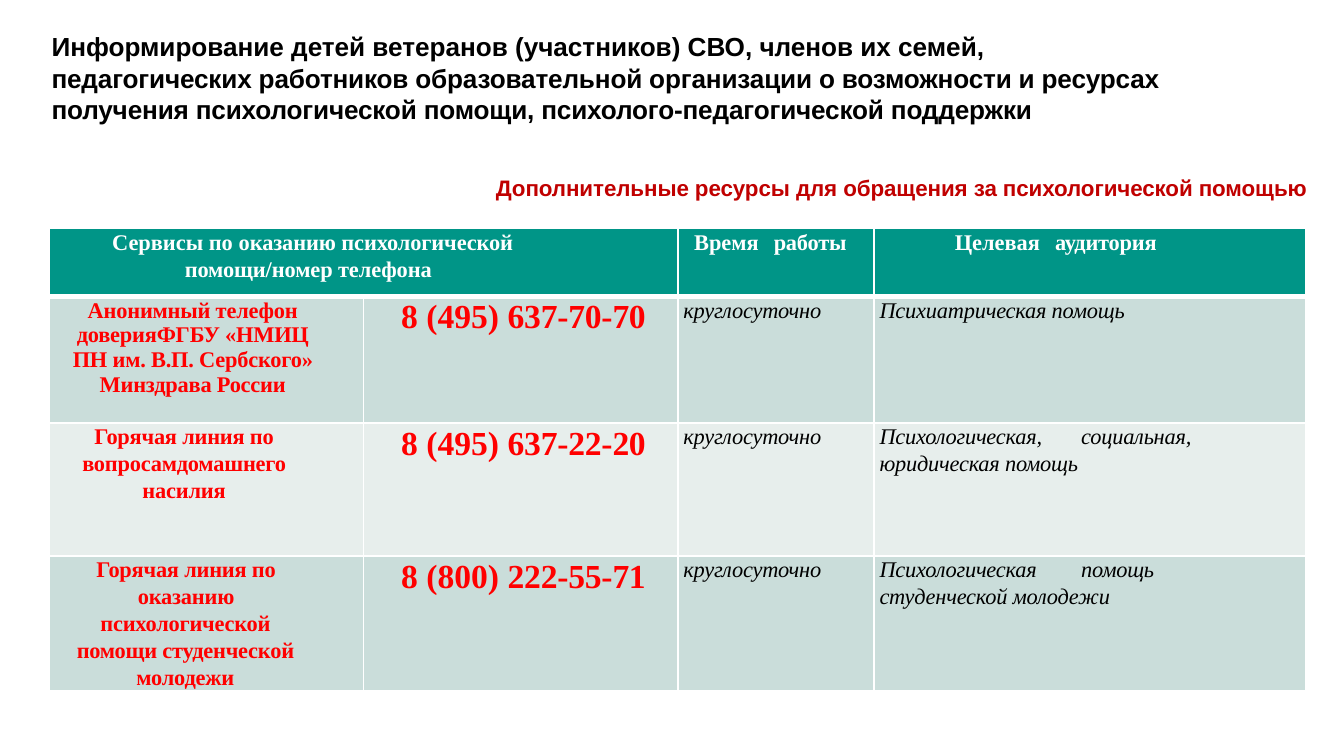
from pptx import Presentation
from pptx.dml.color import RGBColor
from pptx.enum.text import PP_ALIGN as Align, MSO_ANCHOR as Anchor
from pptx.oxml.xmlchemy import OxmlElement as Element
from pptx.util import Inches, Pt

WIDTH = Inches(10)
HEIGHT = WIDTH * 9 // 16
COL, ROW = WIDTH / 100, HEIGHT / 100  # grid of 100 columns by 100 rows
SANS, SERIF = "Arial", "Times New Roman"
BLACK, WHITE, RED, DARK_RED = "000000", "FFFFFF", "FF0000", "C00000"
TEAL, MIST, PALE = "009587", "CADDDA", "E7EEEC"


def color(value):
    return RGBColor.from_string(value)


def grid(left, top, width, height):
    return [round(n) for n in (left * COL, top * ROW, width * COL, height * ROW)]


def add_span(para, text, font, size, ink, bold=True, italic=False, spacing=-0.1):
    span = para.add_run()
    span.text = text
    style = span.font
    style.name, style.size, style.bold, style.italic = font, Pt(size), bold, italic
    style.color.rgb = color(ink)
    span._r.get_or_add_rPr().set("spc", str(round(spacing * 100)))


def set_para(para, left=0, right=0, first=0, lines=None, before=0, align=Align.LEFT,
             tab=None):
    """Indents and the tab stop are in grid columns, lines and before in points."""
    para.alignment = align
    para.space_before = Pt(before)
    if lines:
        para.line_spacing = Pt(lines)
    props = para._p.get_or_add_pPr()
    for name, value in (("marL", left), ("marR", right), ("indent", first)):
        props.set(name, str(round(value * COL)))
    if tab:
        stops, stop = Element("a:tabLst"), Element("a:tab")
        stop.set("pos", str(round(tab * COL)))
        stop.set("algn", "l")
        stops.append(stop)
        props.append(stops)


def new_para(frame, index):
    return frame.add_paragraph() if index else frame.paragraphs[0]


def add_frame(page, box):
    frame = page.shapes.add_textbox(*box).text_frame
    frame.word_wrap = True
    frame.margin_left = frame.margin_right = frame.margin_bottom = 0
    frame.margin_top = Inches(0.01)
    return frame


def add_title(page, box, paragraphs):
    frame = add_frame(page, box)
    for index, (text, spacing) in enumerate(paragraphs):
        para = new_para(frame, index)
        set_para(para, left=0.1, before=0 if index else 1.1)
        add_span(para, text, SANS, 14, BLACK, spacing=spacing)


def add_subtitle(page, box, text):
    frame = add_frame(page, box)
    frame.vertical_anchor = Anchor.BOTTOM
    para = frame.paragraphs[0]
    set_para(para, left=33.4)
    add_span(para, text, SANS, 12, DARK_RED, spacing=-0.05)


def style_cell(cell, fill, top=1, bottom=1):
    cell.margin_left = cell.margin_right = cell.margin_top = cell.margin_bottom = 0
    props = cell._tc.get_or_add_tcPr()
    for side, width in (("L", 1), ("R", 1), ("T", top), ("B", bottom)):
        line = Element(f"a:ln{side}")
        line.set("w", str(Pt(width)))
        solid, ink = Element("a:solidFill"), Element("a:srgbClr")
        ink.set("val", WHITE)
        solid.append(ink)
        line.append(solid)
        props.append(line)
    cell.fill.solid()
    cell.fill.fore_color.rgb = color(fill)


def fill_header(cells):
    service, _, hours, audience = cells
    service.merge(cells[1])
    para = service.text_frame.paragraphs[0]
    set_para(para, left=10.1, right=8, first=-5.4, lines=14.4, before=0.1)
    add_span(para, "Сервисы по ", SERIF, 12, WHITE, spacing=0)
    add_span(para, "оказанию психологической помощи/номер телефона",
             SERIF, 12, WHITE, spacing=-0.05)
    for cell, left, words in ((hours, 1.2, ("Время", "работы")),
                              (audience, 6, ("Целевая", "аудитория"))):
        para = cell.text_frame.paragraphs[0]
        set_para(para, left=left, lines=14.1)
        add_span(para, words[0], SERIF, 12, WHITE, spacing=0)
        add_span(para, " ", SERIF, 12, WHITE, spacing=5)  # wide word gap
        add_span(para, words[1], SERIF, 12, WHITE)


def fill_service(cells, names, phone, audience):
    name_cell, phone_cell, hours_cell, audience_cell = cells
    for index, (text, layout) in enumerate(names):
        para = new_para(name_cell.text_frame, index)
        set_para(para, align=Align.CENTER, **layout)
        add_span(para, text, SERIF, 12, RED)

    para = phone_cell.text_frame.paragraphs[0]
    set_para(para, left=0.4, lines=21.1, align=Align.CENTER)
    for text, spacing in zip(phone, (0, -0.1, -0.3)):
        add_span(para, text, SERIF, 18, RED, spacing=spacing)

    plain = dict(lines=14.1)
    for cell, (text, layout) in ((hours_cell, ("круглосуточно", plain)),
                                 (audience_cell, audience)):
        para = cell.text_frame.paragraphs[0]
        set_para(para, left=0.4, **layout)
        add_span(para, text, SERIF, 12, BLACK, bold=False, italic=True)


def add_services(page, box, columns, rows, services):
    table = page.shapes.add_table(len(rows), len(columns), *box).table
    table.first_row = table.horz_banding = False
    for column, width in zip(table.columns, columns):
        column.width = round(width * COL)
    for row, height in zip(table.rows, rows):
        row.height = round(height * ROW)
    for index, row in enumerate(table.rows):
        fill = TEAL if index == 0 else (PALE, MIST)[index % 2]
        for cell in row.cells:
            style_cell(cell, fill, top=3 if index == 1 else 1,
                       bottom=3 if index == 0 else 1)
    header, *body = [list(row.cells) for row in table.rows]
    fill_header(header)
    for cells, service in zip(body, services):
        fill_service(cells, *service)


TITLE = [
    ("Информирование детей ветеранов (участников) СВО, членов их семей,", -0.03),
    ("педагогических работников образовательной организации о возможности и ресурсах "
     "получения психологической помощи, психолого-педагогической поддержки", -0.1),
]
SERVICES = [
    ([("Анонимный телефон", dict(right=2, lines=14.1)),
      ("доверияФГБУ «НМИЦ ПН им. В.П. Сербского» Минздрава России",
       dict(left=1.6, right=3.6))],
     ("8 (495) ", "637-70-", "70"),
     ("Психиатрическая помощь", dict(lines=14.1))),
    ([("Горячая линия по вопросамдомашнего насилия",
       dict(left=2.3, right=5.6, lines=14.4, before=0.2))],
     ("8 (495) ", "637-22-", "20"),
     ("Психологическая,\tсоциальная, юридическая помощь",
      dict(right=7.5, lines=14.4, before=0.2, tab=20.4))),
    ([("Горячая линия по оказанию",
       dict(left=3.3, right=6.3, lines=14.4, before=0.2)),
      ("психологической помощи студенческой молодежи",
       dict(left=1.8, right=4.9, lines=14.4))],
     ("8 (800) ", "222-55-", "71"),
     ("Психологическая\tпомощь студенческой молодежи",
      dict(right=8, lines=14.4, before=0.2, tab=20))),
]


def main():
    deck = Presentation()
    deck.slide_width, deck.slide_height = WIDTH, HEIGHT
    page = deck.slides.add_slide(deck.slide_layouts[6])
    add_title(page, grid(3.74, 3.9, 86.3, 12.8), TITLE)
    add_subtitle(page, grid(3.5, 16.3, 94.4, 10.3),
                 "Дополнительные ресурсы для обращения за психологической помощью")
    add_services(page, grid(3.65, 30.25, 93.5, 61.1), (23.4, 23.4, 14.6, 32.1),
                 (9, 16.7, 17.6, 17.8), SERVICES)
    deck.save("out.pptx")


if __name__ == "__main__":
    main()
